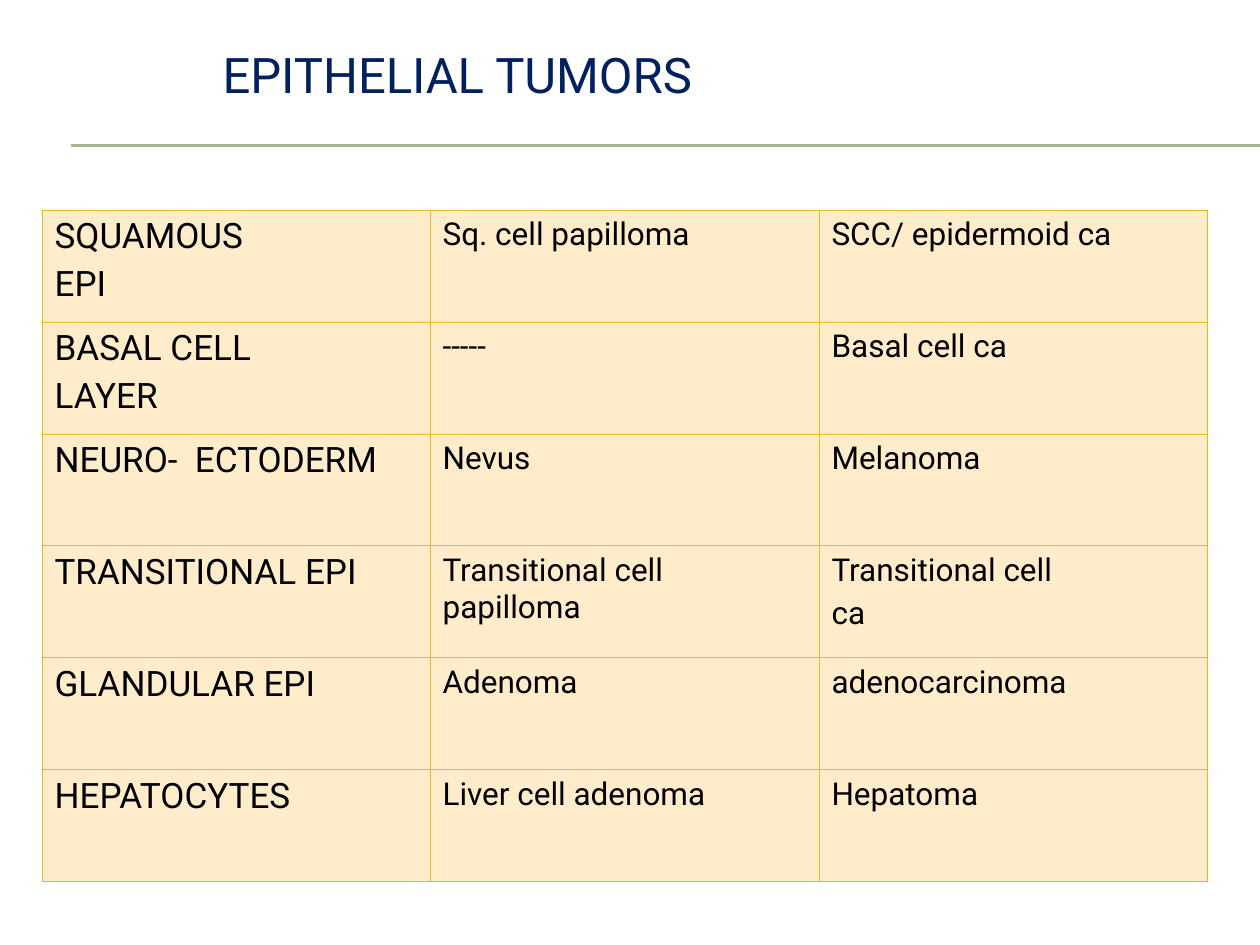
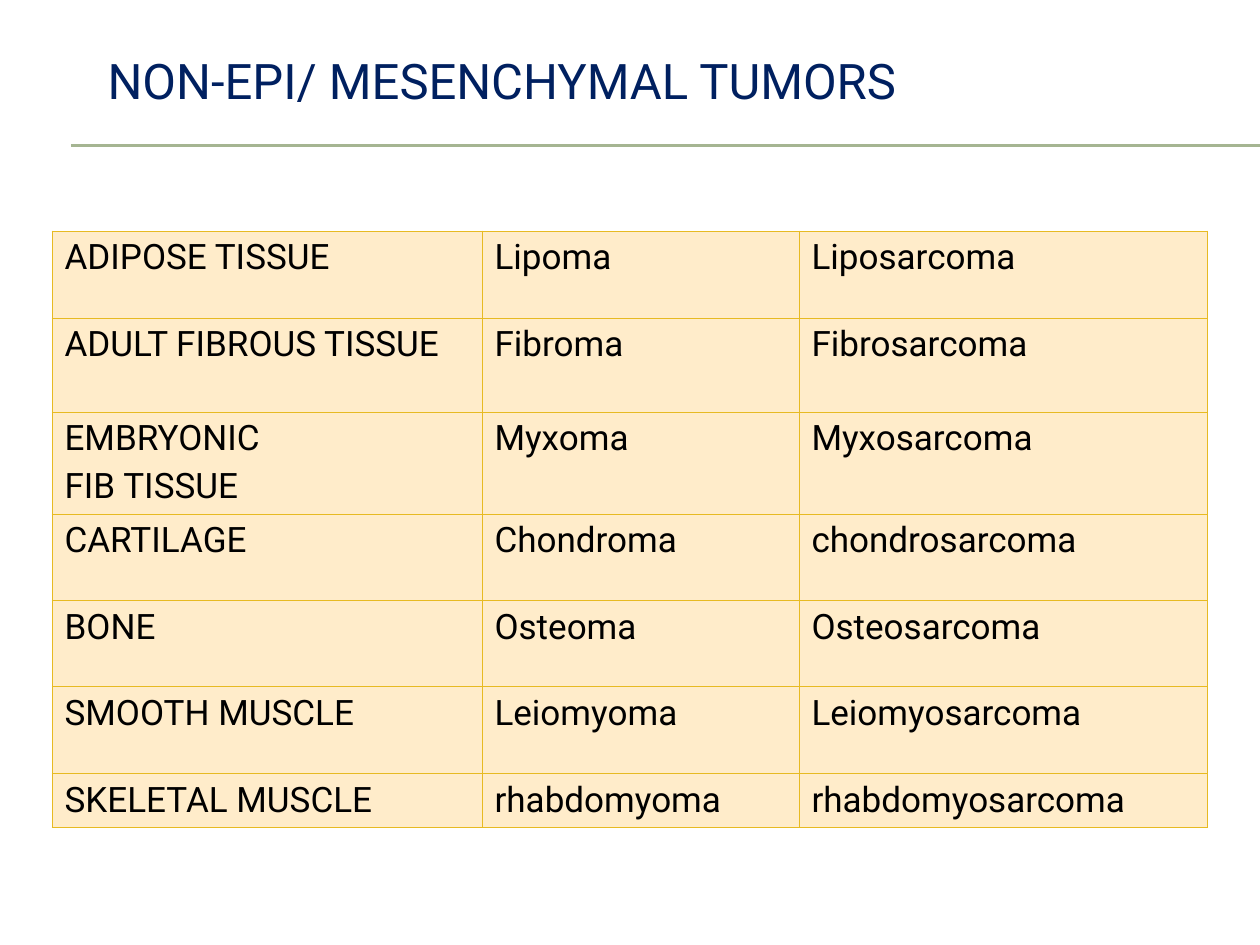
from lxml import etree
from pptx import Presentation
from pptx.dml.color import RGBColor
from pptx.enum.shapes import MSO_CONNECTOR
from pptx.enum.text import MSO_ANCHOR, PP_ALIGN
from pptx.oxml.ns import qn
from pptx.util import Pt

EMU_PER_PX = 914400 / 126
PAGE_WIDTH, PAGE_HEIGHT = 1260, 945
STRAIGHT = MSO_CONNECTOR.STRAIGHT
LEFT = PP_ALIGN.LEFT
MIDDLE = MSO_ANCHOR.MIDDLE
TITLE_ONLY = 5

FONT = "Roboto"
NAVY, BLACK = "002060", "000000"
RULE_GREEN, CELL_CREAM, BORDER_GOLD = "A5B592", "FFECCA", "E7BA23"
RULE_LEFT = 71
RULE_TOPS = (145, 146)
SPACE_BEFORE_RATIO = 0.2

EPITHELIAL = {
    "title": "EPITHELIAL TUMORS",
    "title_box": (210, 21, 851, 105),
    "corner": (42, 210),
    "columns": [388, 389, 388],
    "rows": [112] * 6,
    "sizes": (20, 18, 18),
    "cells": [
        ("SQUAMOUS\nEPI", "Sq. cell papilloma", "SCC/ epidermoid ca"),
        ("BASAL CELL\nLAYER", "-----", "Basal cell ca"),
        ("NEURO-  ECTODERM", "Nevus", "Melanoma"),
        ("TRANSITIONAL EPI", "Transitional cell papilloma", "Transitional cell\nca"),
        ("GLANDULAR EPI", "Adenoma", "adenocarcinoma"),
        ("HEPATOCYTES", "Liver cell adenoma", "Hepatoma"),
    ],
}
MESENCHYMAL = {
    "title": "NON-EPI/ MESENCHYMAL TUMORS",
    "title_box": (95, 32, 1071, 95),
    "corner": (52, 231),
    "columns": [430, 317, 408],
    "rows": [87, 94, 102, 87, 86, 87, 54],
    "sizes": (20, 20, 20),
    "cells": [
        ("ADIPOSE TISSUE", "Lipoma", "Liposarcoma"),
        ("ADULT FIBROUS TISSUE", "Fibroma", "Fibrosarcoma"),
        ("EMBRYONIC\nFIB TISSUE", "Myxoma", "Myxosarcoma"),
        ("CARTILAGE", "Chondroma", "chondrosarcoma"),
        ("BONE", "Osteoma", "Osteosarcoma"),
        ("SMOOTH MUSCLE", "Leiomyoma", "Leiomyosarcoma"),
        ("SKELETAL MUSCLE", "rhabdomyoma", "rhabdomyosarcoma"),
    ],
}


def px(length):
    """Turn whole pixels into EMU."""
    return round(length * EMU_PER_PX)


def color(value):
    """Turn a hex string into a colour."""
    return RGBColor.from_string(value)


def format_font(font, size, tint):
    """Apply the shared typeface with a size and a colour."""
    for name, value in {"name": FONT, "size": Pt(size), "bold": False}.items():
        setattr(font, name, value)
    font.color.rgb = color(tint)


def add_rules(page):
    """Draw the double rule under the title."""
    for top in RULE_TOPS:
        rule = page.shapes.add_connector(
            STRAIGHT, px(RULE_LEFT), px(top), px(PAGE_WIDTH), px(top))
        rule.line.color.rgb = color(RULE_GREEN)
        rule.line.width = Pt(0.75)
        etree.SubElement(rule._element.spPr, qn("a:effectLst"))


def place_title(page, text, box):
    """Move the title placeholder into its box and fill it."""
    title = page.shapes.title
    for name, length in zip(("left", "top", "width", "height"), box):
        setattr(title, name, px(length))
    frame = title.text_frame
    frame.text = text
    frame.vertical_anchor = MIDDLE
    para = frame.paragraphs[0]
    para.alignment = LEFT
    format_font(para.runs[0].font, 28, NAVY)


def add_borders(cell):
    """Outline the four sides of a cell."""
    properties = cell._tc.get_or_add_tcPr()
    for side in ("lnL", "lnR", "lnT", "lnB"):
        line = etree.SubElement(properties, qn(f"a:{side}"), w=str(Pt(0.5)))
        fill = etree.SubElement(line, qn("a:solidFill"))
        etree.SubElement(fill, qn("a:srgbClr"), val=BORDER_GOLD)


def fill_cell(cell, text, size):
    """Write and format the paragraphs of one cell."""
    add_borders(cell)
    cell.fill.solid()
    cell.fill.fore_color.rgb = color(CELL_CREAM)
    cell.text = text
    for index, para in enumerate(cell.text_frame.paragraphs):
        if index:
            para.space_before = Pt(size * SPACE_BEFORE_RATIO)
        format_font(para.runs[0].font, size, BLACK)


def add_tumor_table(page, content):
    """Build the table of tissues with their benign and malignant tumors."""
    columns, rows = content["columns"], content["rows"]
    left, top = content["corner"]
    table = page.shapes.add_table(
        len(rows), len(columns), px(left), px(top), px(sum(columns)), px(sum(rows))).table
    table.first_row = table.horz_banding = False
    for column, width in zip(table.columns, columns):
        column.width = px(width)
    for row, height, texts in zip(table.rows, rows, content["cells"]):
        row.height = px(height)
        for cell, text, size in zip(row.cells, texts, content["sizes"]):
            fill_cell(cell, text, size)


def add_tumor_page(deck, content):
    """Add one slide with title, rules and table."""
    page = deck.slides.add_slide(deck.slide_layouts[TITLE_ONLY])
    add_rules(page)
    place_title(page, content["title"], content["title_box"])
    add_tumor_table(page, content)


def main():
    """Build and save the deck."""
    deck = Presentation()
    deck.slide_width, deck.slide_height = px(PAGE_WIDTH), px(PAGE_HEIGHT)
    for content in (EPITHELIAL, MESENCHYMAL):
        add_tumor_page(deck, content)
    deck.save("out.pptx")


if __name__ == "__main__":
    main()
